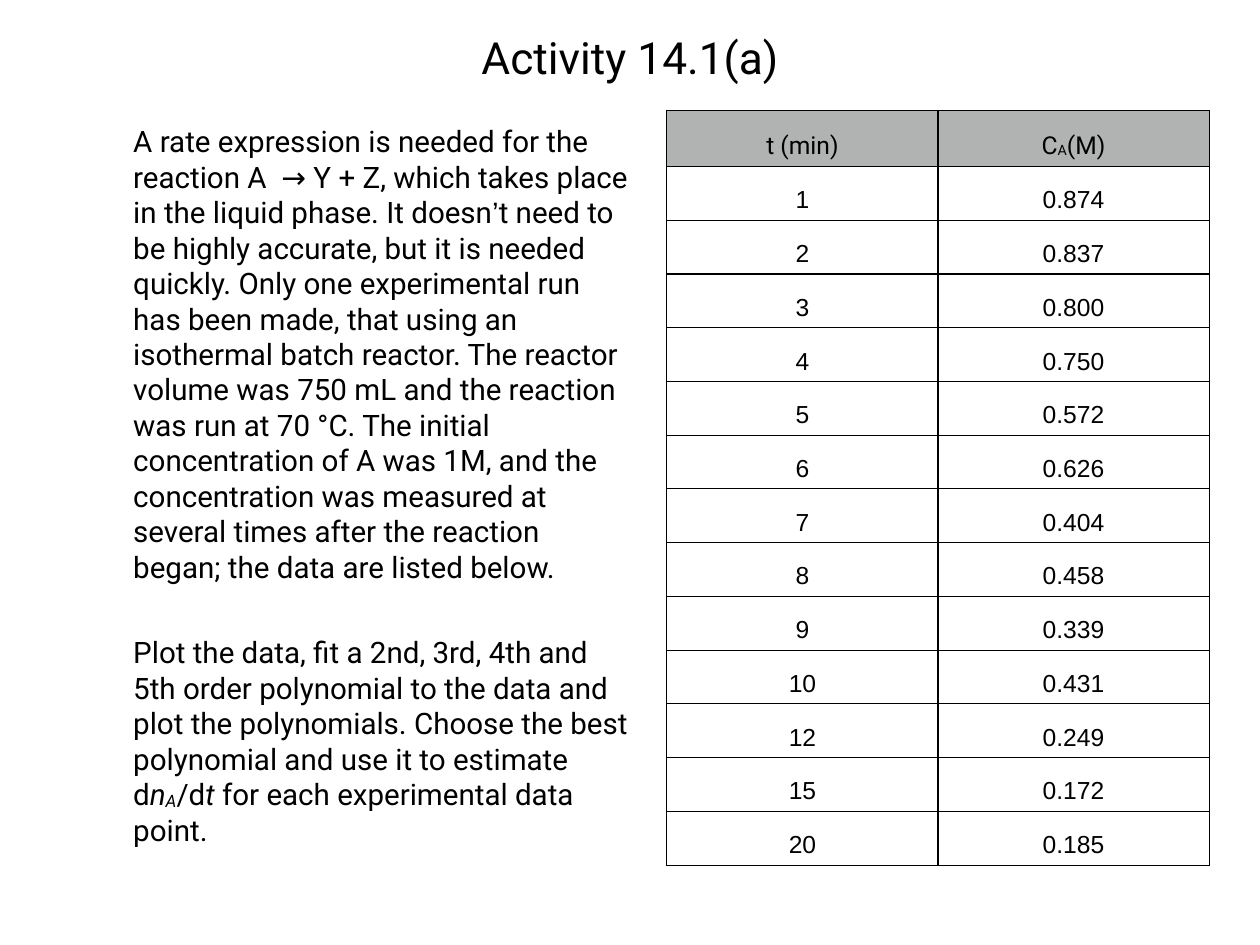
from dataclasses import dataclass
from typing import Any

from lxml import etree
from pptx import Presentation
from pptx.dml.color import RGBColor
from pptx.enum.text import MSO_ANCHOR, MSO_AUTO_SIZE, PP_ALIGN
from pptx.oxml.ns import qn
from pptx.util import Cm, Pt

LEFT, CENTER = PP_ALIGN.LEFT, PP_ALIGN.CENTER
TOP = MSO_ANCHOR.TOP
NO_FIT = MSO_AUTO_SIZE.NONE
TITLE_ONLY = 5
COLORS = {"ink": "000000", "header": "B0B3B2", "paper": "FFFFFF"}
HEADING_FONT, DATA_FONT = "Roboto", "Arial"
FRAME_INSET, CELL_INSET = Cm(0.16), Cm(0.18)
BORDER = Pt(1)
BORDER_SIDES = ("a:lnL", "a:lnR", "a:lnT", "a:lnB")


@dataclass(frozen=True)
class Span:
    text: str
    font: str = HEADING_FONT
    italic: bool = False
    subscript: bool = False


@dataclass(frozen=True)
class Measurement:
    minutes: int
    concentration: float


TITLE = [Span("Activity 14.1(a)")]
PROBLEM = [
    Span("A rate expression is needed for the reaction A  → Y + Z, which takes place "
         "in the liquid phase. It doesn"),
    Span("’", font=DATA_FONT),
    Span("t need to be highly accurate, but it is needed quickly. Only one experimental "
         "run has been made, that using an isothermal batch reactor. The reactor volume "
         "was 750 mL and the reaction was run at 70 °C. The initial concentration of A "
         "was 1M, and the concentration was measured at several times after the reaction "
         "began; the data are listed below."),
]
TASK = [
    Span("Plot the data, fit a 2nd, 3rd, 4th and 5th order polynomial to the data and "
         "plot the polynomials. Choose the best polynomial and use it to estimate d"),
    Span("n", italic=True),
    Span("A", italic=True, subscript=True),
    Span("/d"),
    Span("t", italic=True),
    Span(" for each experimental data point."),
]
COLUMN_HEADS = [
    [Span("t (min)")],
    [Span("C"), Span("A", subscript=True), Span("(M)")],
]
MEASUREMENTS = [
    Measurement(1, 0.874), Measurement(2, 0.837), Measurement(3, 0.800),
    Measurement(4, 0.750), Measurement(5, 0.572), Measurement(6, 0.626),
    Measurement(7, 0.404), Measurement(8, 0.458), Measurement(9, 0.339),
    Measurement(10, 0.431), Measurement(12, 0.249), Measurement(15, 0.172),
    Measurement(20, 0.185),
]


def write(paragraph: Any, spans: list[Span], *, size: float, align: PP_ALIGN = LEFT,
          before: float = 0, spacing: float = 1.0) -> None:
    paragraph.alignment = align
    paragraph.space_before = Pt(before)
    paragraph.line_spacing = spacing
    for span in spans:
        run = paragraph.add_run()
        run.text = span.text
        run.font.name = span.font
        run.font.size = Pt(size)
        run.font.bold = False
        run.font.italic = span.italic
        run.font.color.rgb = RGBColor.from_string(COLORS["ink"])
        if span.subscript:
            run.font._element.set("baseline", "-6000")


def set_insets(holder: Any, inset: Cm) -> None:
    holder.margin_left = holder.margin_right = inset
    holder.margin_top = holder.margin_bottom = inset
    holder.vertical_anchor = TOP


def prepare_frame(shape: Any) -> Any:
    frame = shape.text_frame
    frame.word_wrap = True
    frame.auto_size = NO_FIT
    set_insets(frame, FRAME_INSET)
    return frame


def draw_borders(cell: Any) -> None:
    properties = cell._tc.get_or_add_tcPr()
    for position, side in enumerate(BORDER_SIDES):
        line = etree.Element(qn(side), w=str(BORDER))
        fill = etree.SubElement(line, qn("a:solidFill"))
        etree.SubElement(fill, qn("a:srgbClr"), val=COLORS["ink"])
        properties.insert(position, line)


def fill_cell(cell: Any, spans: list[Span], color: str) -> None:
    set_insets(cell, CELL_INSET)
    cell.fill.solid()
    cell.fill.fore_color.rgb = RGBColor.from_string(color)
    write(cell.text_frame.paragraphs[0], spans, size=20, align=CENTER, spacing=1.5)
    draw_borders(cell)


def add_title(slide: Any) -> None:
    title = slide.shapes.title
    title.left, title.top = Cm(3.53), Cm(0.71)
    title.width, title.height = Cm(29.06), Cm(3.53)
    write(prepare_frame(title).paragraphs[0], TITLE, size=36, align=CENTER)


def add_problem(slide: Any) -> None:
    problem = slide.shapes.add_textbox(Cm(3.66), Cm(3.38), Cm(14.53), Cm(20.29))
    frame = prepare_frame(problem)
    write(frame.paragraphs[0], PROBLEM, size=24, before=6)
    write(frame.add_paragraph(), TASK, size=24, before=41)


def add_measurements(slide: Any) -> None:
    rows = [COLUMN_HEADS] + [
        [[Span(str(m.minutes), font=DATA_FONT)],
         [Span(f"{m.concentration:.3f}", font=DATA_FONT)]]
        for m in MEASUREMENTS
    ]
    row_height, column_width = Cm(1.35), Cm(7.77)
    table = slide.shapes.add_table(
        len(rows), len(COLUMN_HEADS), Cm(19.12), Cm(3.17),
        column_width * len(COLUMN_HEADS), row_height * len(rows)).table
    table.first_row = table.horz_banding = False
    for row_index, row in enumerate(rows):
        table.rows[row_index].height = row_height
        color = COLORS["paper" if row_index else "header"]
        for column_index, spans in enumerate(row):
            fill_cell(table.cell(row_index, column_index), spans, color)


def main() -> None:
    presentation = Presentation()
    presentation.slide_width, presentation.slide_height = Cm(36.12), Cm(27.1)
    slide = presentation.slides.add_slide(presentation.slide_layouts[TITLE_ONLY])
    add_title(slide)
    add_problem(slide)
    add_measurements(slide)
    presentation.save("out.pptx")


if __name__ == "__main__":
    main()
